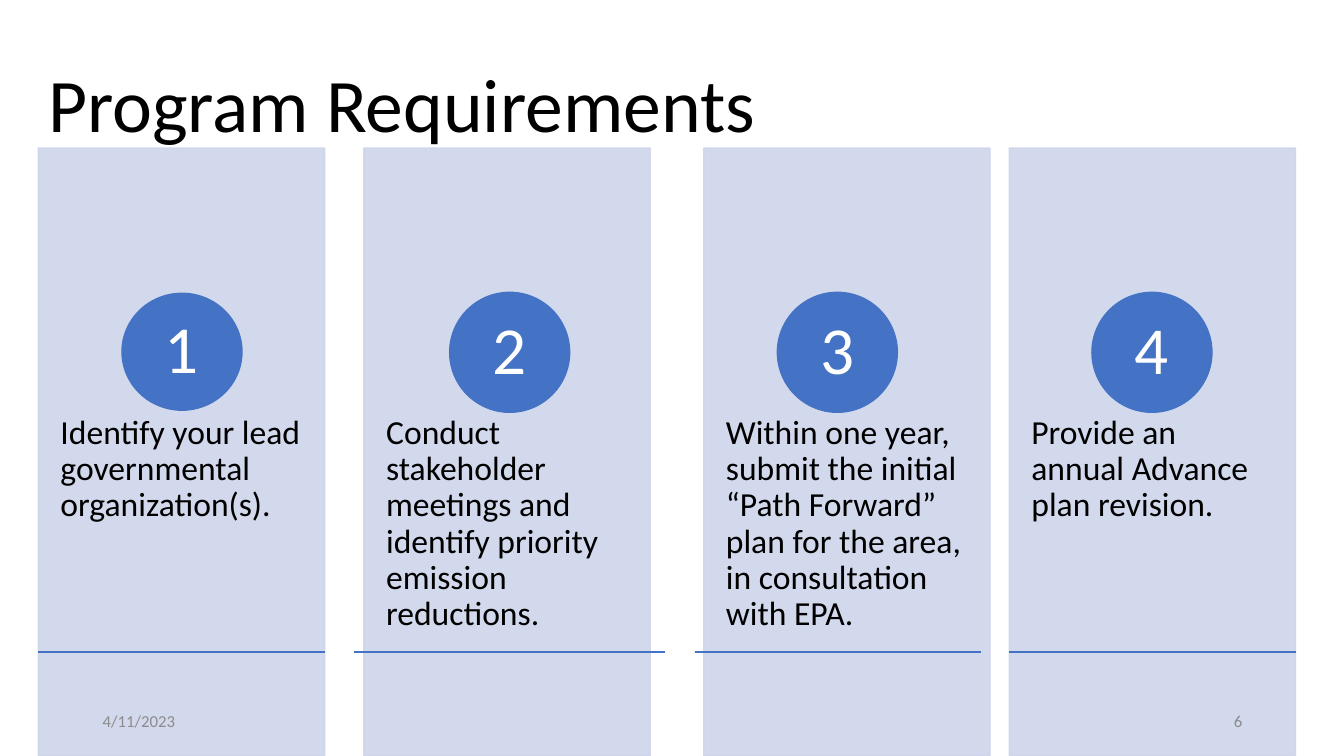
from dataclasses import dataclass

from lxml.etree import SubElement
from pptx import Presentation
from pptx.dml.color import RGBColor
from pptx.enum.shapes import MSO_CONNECTOR, MSO_SHAPE
from pptx.enum.text import MSO_ANCHOR, PP_ALIGN
from pptx.oxml.ns import qn
from pptx.shapes.autoshape import Shape
from pptx.slide import Slide
from pptx.util import Emu, Pt

EMU_PER_PX = 9144  # 100 px to the inch


@dataclass(frozen=True)
class Theme:
    font: str = "Calibri"
    ink: str = "000000"
    panel: str = "CFD5EA"
    accent: str = "4472C4"
    light: str = "FFFFFF"
    muted: str = "8C8C8C"
    title_size: int = 54
    number_size: int = 48
    body_size: int = 24
    footer_size: int = 12
    panel_opacity: int = 90


@dataclass(frozen=True)
class Requirement:
    left: int
    circle_left: int
    rule_left: int
    text: str
    rule_width: int = 284
    circle_top: int = 290
    circle_height: int = 119


THEME = Theme()
PANEL_TOP, PANEL_WIDTH, PANEL_HEIGHT = 147, 284, 603
BODY_TOP, BODY_HEIGHT = 376, 362
CIRCLE_WIDTH = 119
RULE_TOP = 647
FOOTER_TOP, FOOTER_WIDTH, FOOTER_HEIGHT = 695, 300, 40

REQUIREMENTS = [
    Requirement(38, 121, 38, "Identify your lead governmental organization(s).",
                circle_top=291, circle_height=116),
    Requirement(361, 446, 351, "Conduct stakeholder meetings and identify priority "
                "emission reductions.", rule_width=309),
    Requirement(698, 771, 689, "Within one year, submit the initial “Path Forward” "
                "plan for the area, in consultation with EPA."),
    Requirement(1001, 1083, 1001, "Provide an annual Advance plan revision."),
]


def px(length: int) -> Emu:
    return Emu(length * EMU_PER_PX)


def write_text(box: Shape, text: str, *, size: int, color: str,
               align: PP_ALIGN = PP_ALIGN.LEFT,
               anchor: MSO_ANCHOR = MSO_ANCHOR.MIDDLE,
               spacing: float = 1.0, inset: tuple[int, int] = (10, 5)) -> None:
    frame = box.text_frame
    frame.word_wrap = True
    frame.vertical_anchor = anchor
    frame.margin_left = frame.margin_right = px(inset[0])
    frame.margin_top = frame.margin_bottom = px(inset[1])
    para = frame.paragraphs[0]
    para.alignment = align
    para.line_spacing = spacing
    span = para.add_run()
    span.text = text
    span.font.name = THEME.font
    span.font.size = Pt(size)
    span.font.color.rgb = RGBColor.from_string(color)


def add_box(page: Slide, left: int, top: int, width: int, height: int) -> Shape:
    return page.shapes.add_textbox(px(left), px(top), px(width), px(height))


def add_filled(page: Slide, kind: MSO_SHAPE, left: int, top: int, width: int,
               height: int, color: str, opacity: int = 100) -> Shape:
    shape = page.shapes.add_shape(kind, px(left), px(top), px(width), px(height))
    shape.shadow.inherit = False
    shape.line.width = Pt(1)
    for fill in (shape.fill, shape.line.fill):
        fill.solid()
        fill.fore_color.rgb = RGBColor.from_string(color)
    if opacity < 100:
        for swatch in shape.element.spPr.iter(qn("a:srgbClr")):
            SubElement(swatch, qn("a:alpha"), val=str(opacity * 1000))
    return shape


def add_rule(page: Slide, left: int, top: int, width: int) -> None:
    rule = page.shapes.add_connector(
        MSO_CONNECTOR.STRAIGHT, px(left), px(top), px(left + width), px(top))
    rule.line.width = Pt(1)
    rule.line.color.rgb = RGBColor.from_string(THEME.accent)
    SubElement(rule.element.spPr, qn("a:effectLst"))


def add_requirement(page: Slide, number: int, item: Requirement) -> None:
    add_filled(page, MSO_SHAPE.RECTANGLE, item.left, PANEL_TOP, PANEL_WIDTH,
               PANEL_HEIGHT, THEME.panel, THEME.panel_opacity)
    body = add_box(page, item.left, BODY_TOP, PANEL_WIDTH, BODY_HEIGHT)
    write_text(body, item.text, size=THEME.body_size, color=THEME.ink,
               anchor=MSO_ANCHOR.TOP, spacing=0.9, inset=(22, 36))
    circle = add_filled(page, MSO_SHAPE.OVAL, item.circle_left, item.circle_top,
                        CIRCLE_WIDTH, item.circle_height, THEME.accent)
    write_text(circle, str(number), size=THEME.number_size, color=THEME.light,
               align=PP_ALIGN.CENTER, spacing=0.9, inset=(9, 1))
    add_rule(page, item.rule_left, RULE_TOP, item.rule_width)


def add_footer(page: Slide, left: int, text: str, align: PP_ALIGN) -> None:
    box = add_box(page, left, FOOTER_TOP, FOOTER_WIDTH, FOOTER_HEIGHT)
    write_text(box, text, size=THEME.footer_size, color=THEME.muted, align=align)


def main() -> None:
    deck = Presentation()
    deck.slide_width, deck.slide_height = px(1333), px(750)
    page = deck.slides.add_slide(deck.slide_layouts[6])

    # Title
    title = add_box(page, 38, 35, 1248, 145)
    write_text(title, "Program Requirements", size=THEME.title_size,
               color=THEME.ink, spacing=0.9)

    # Numbered columns
    for number, item in enumerate(REQUIREMENTS, start=1):
        add_requirement(page, number, item)

    # Footer
    add_footer(page, 942, "6", PP_ALIGN.RIGHT)
    add_footer(page, 92, "4/11/2023", PP_ALIGN.LEFT)

    deck.save("out.pptx")


if __name__ == "__main__":
    main()
